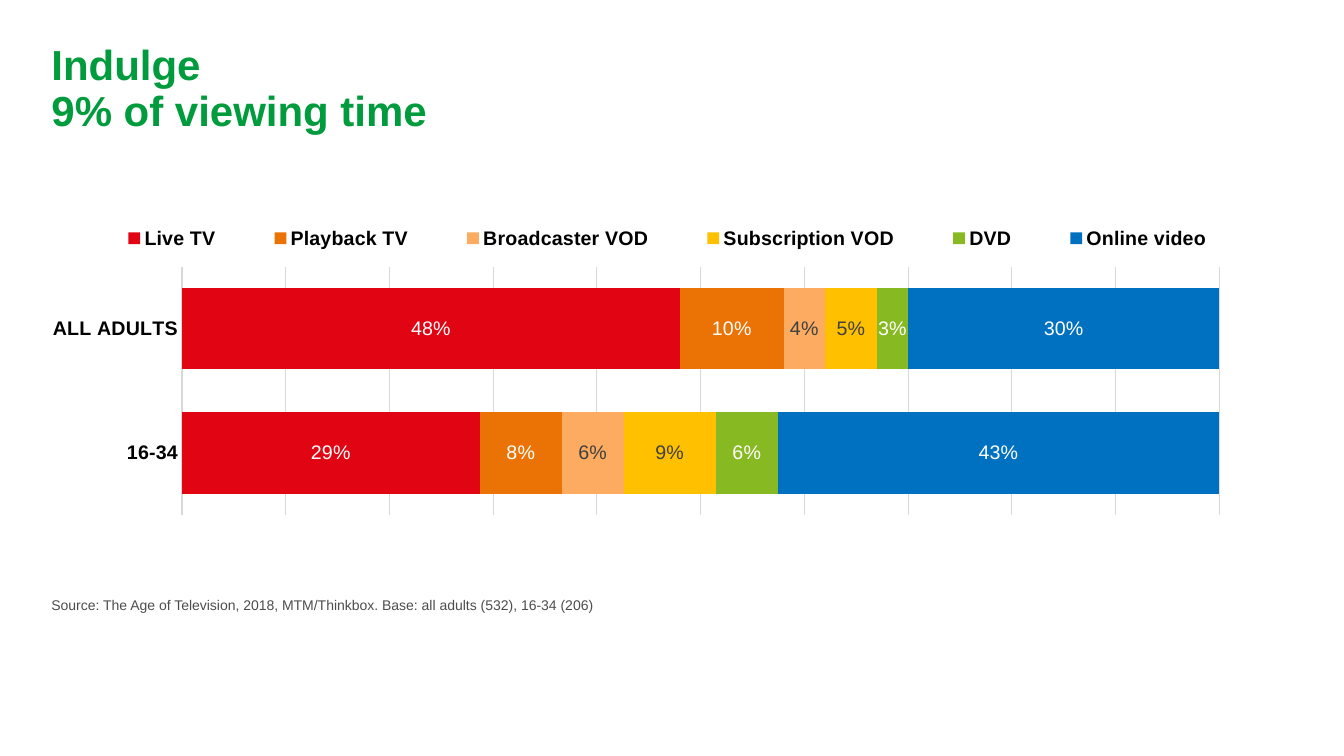
from copy import deepcopy

from lxml import etree
from pptx import Presentation
from pptx import util as u
from pptx.chart.data import CategoryChartData
from pptx.dml.color import RGBColor
from pptx.enum import chart as ch
from pptx.enum import text
from pptx.oxml import parse_xml
from pptx.oxml.ns import nsdecls, qn

COLORS = {
    "title": "009B3C",
    "source": "4D4D4D",
    "black": "000000",
    "white": "FFFFFF",
    "dark": "404040",
    "grid": "D9D9D9",
    "live": "E10514",
    "playback": "EB7305",
    "broadcaster": "FCAB60",
    "subscription": "FFC000",
    "dvd": "87B923",
    "online": "0070C0",
}
CATEGORIES = ["16-34", "ALL ADULTS"]
SERIES = [
    ("Live TV", (0.29, 0.48), "live", "white"),
    ("Playback TV", (0.08, 0.1), "playback", "white"),
    ("Broadcaster VOD", (0.06, 0.04), "broadcaster", "dark"),
    ("Subscription VOD", (0.09, 0.05), "subscription", "dark"),
    ("DVD", (0.06, 0.03), "dvd", "white"),
    ("Online video", (0.43, 0.3), "online", "white"),
]


def rgb(name):
    return RGBColor.from_string(COLORS[name])


def style_font(font, size=14, color="black", bold=False):
    font.name = "Arial"
    font.size = u.Pt(size)
    font.bold = bold
    font.color.rgb = rgb(color)


def write_text(tf, content, spacing=None, **style):
    p = tf.paragraphs[0]
    p.text = content
    p.space_before = u.Pt(0)
    p.line_spacing = spacing
    for r in p.runs:
        style_font(r.font, **style)
    for br in p._p.findall(qn("a:br")):
        br.append(deepcopy(p.runs[0]._r.rPr))
    return p


def manual_layout(x, y, w, h, inner=False):
    layout = parse_xml(f"<c:layout {nsdecls('c')}><c:manualLayout/></c:layout>")
    settings = [("layoutTarget", "inner")] if inner else []
    settings += [("xMode", "edge"), ("yMode", "edge"), ("x", x), ("y", y), ("w", w), ("h", h)]
    for tag, value in settings:
        etree.SubElement(layout[0], qn(f"c:{tag}")).set("val", str(value))
    return layout


class SlideBuilder:
    def __init__(self, prs):
        self.s = prs.slides.add_slide(prs.slide_layouts[1])

    def place(self, sp, left, top, width, height):
        sp.left, sp.top = u.Inches(left), u.Inches(top)
        sp.width, sp.height = u.Inches(width), u.Inches(height)
        tf = sp.text_frame
        tf.word_wrap = True
        tf.auto_size = text.MSO_AUTO_SIZE.NONE
        tf.vertical_anchor = text.MSO_ANCHOR.TOP
        return tf

    def title(self, content, *box):
        tf = self.place(self.s.shapes.title, *box)
        p = write_text(tf, content, spacing=0.9, size=30, color="title", bold=True)
        p.alignment = text.PP_ALIGN.LEFT

    def source(self, content, *box):
        tf = self.place(self.s.placeholders[1], *box)
        p = write_text(tf, content, size=10, color="source")
        pPr = p._p.get_or_add_pPr()
        pPr.set("marL", "0")
        pPr.set("indent", "0")
        etree.SubElement(pPr, qn("a:buNone"))

    def stacked_bars(self, categories, series, *box):
        data = CategoryChartData(number_format="0%")
        data.categories = categories
        for name, values, _, _ in series:
            data.add_series(name, values)
        chart = self.s.shapes.add_chart(
            ch.XL_CHART_TYPE.BAR_STACKED_100, *map(u.Inches, box), data
        ).chart
        style_font(chart.font, size=10)
        chart.has_title = False
        plot = chart.plots[0]
        plot.gap_width, plot.overlap = 53, 100
        plot.vary_by_categories = False
        for bar, (_, _, fill, label) in zip(plot.series, series):
            bar.format.fill.solid()
            bar.format.fill.fore_color.rgb = rgb(fill)
            labels = bar.data_labels
            labels.show_value = True
            labels.number_format = "0%"
            labels.number_format_is_linked = False
            labels.position = ch.XL_LABEL_POSITION.CENTER
            style_font(labels.font, color=label)
        self.axes(chart)
        self.legend(chart)
        area = chart._chartSpace.chart.plotArea
        for old in area.findall(qn("c:layout")):
            area.remove(old)
        area.insert(0, manual_layout(0.106, 0.239, 0.842, 0.686, inner=True))

    def axes(self, chart):
        cat, val = chart.category_axis, chart.value_axis
        cat.major_tick_mark = ch.XL_TICK_MARK.NONE
        style_font(cat.tick_labels.font, bold=True)
        val.minimum_scale, val.maximum_scale, val.major_unit = 0, 1, 0.1
        val.has_major_gridlines = True
        val.visible = False
        for line in (cat.format.line, val.major_gridlines.format.line):
            line.color.rgb = rgb("grid")
            line.width = u.Pt(0.75)

    def legend(self, chart):
        chart.has_legend = True
        legend = chart.legend
        legend.position = ch.XL_LEGEND_POSITION.BOTTOM
        legend.include_in_layout = False
        style_font(legend.font, bold=True)
        element = legend._element
        for old in element.findall(qn("c:layout")):
            element.remove(old)
        element.find(qn("c:legendPos")).addnext(manual_layout(0.02, 0.11, 0.96, 0.1))


def main():
    prs = Presentation()
    prs.slide_width, prs.slide_height = u.Inches(13.33), u.Inches(7.5)
    slide = SlideBuilder(prs)
    slide.title("Indulge\v9% of viewing time", 0.41, 0.39, 12.4, 1.12)
    slide.source(
        "Source: The Age of Television, 2018, MTM/Thinkbox. Base: all adults (532), 16-34 (206)",
        0.41, 5.87, 12.4, 0.33,
    )
    slide.stacked_bars(CATEGORIES, SERIES, 0.51, 1.79, 12.22, 3.59)
    prs.save("out.pptx")


if __name__ == "__main__":
    main()
